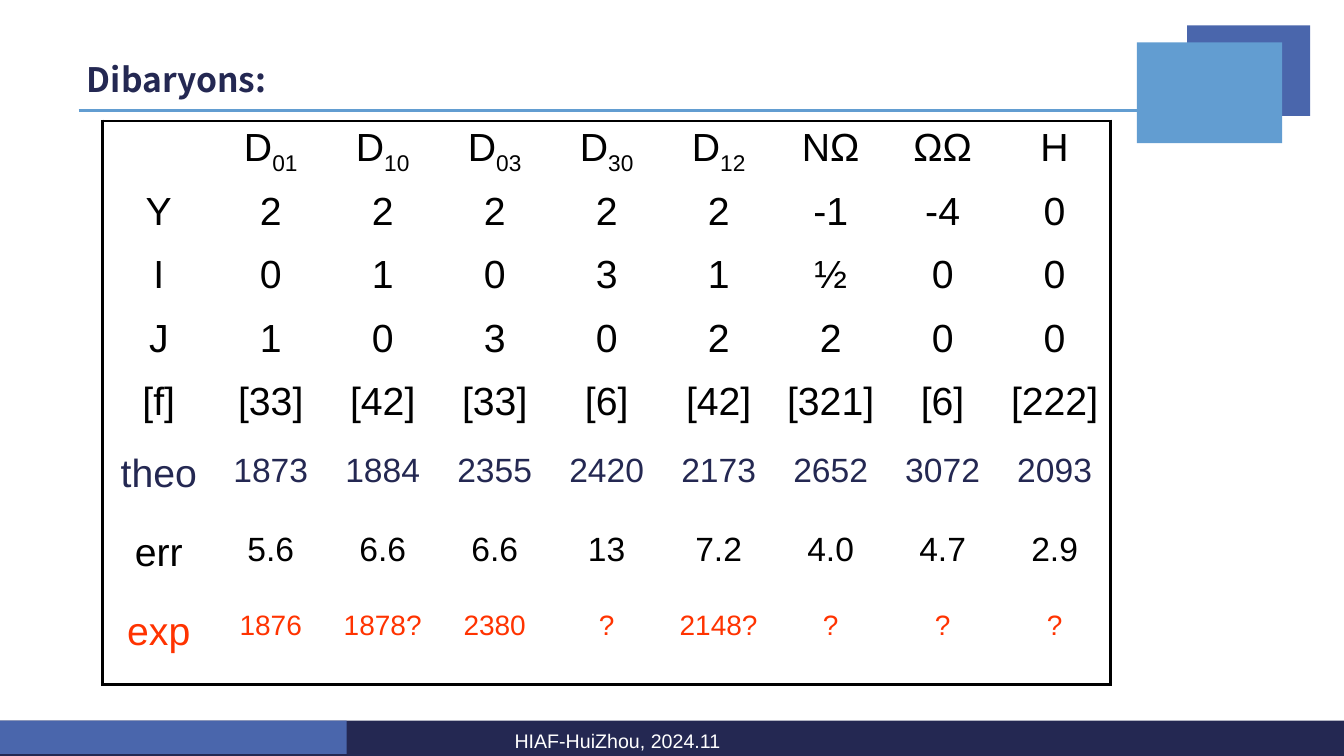
from lxml.etree import SubElement
from pptx import Presentation
from pptx.dml.color import RGBColor
from pptx.enum.shapes import MSO_CONNECTOR, MSO_SHAPE
from pptx.enum.text import MSO_ANCHOR, PP_ALIGN
from pptx.oxml.ns import qn
from pptx.util import Cm, Pt

# Content
TITLE = "Dibaryons:"
FOOTER = "HIAF-HuiZhou, 2024.11"
STATES = [("", ""), ("D", "01"), ("D", "10"), ("D", "03"), ("D", "30"),
          ("D", "12"), ("NΩ", ""), ("ΩΩ", ""), ("H", "")]
# label, values, row height in cm, value size, colour
PROPERTIES = [
    ("Y", ["2", "2", "2", "2", "2", "-1", "-4", "0"], 1.6, "large", "black"),
    ("I", ["0", "1", "0", "3", "1", "½", "0", "0"], 1.6, "large", "black"),
    ("J", ["1", "0", "3", "0", "2", "2", "0", "0"], 1.6, "large", "black"),
    ("[f]", ["[33]", "[42]", "[33]", "[6]", "[42]", "[321]", "[6]", "[222]"],
     1.8, "large", "black"),
    ("theo", ["1873", "1884", "2355", "2420", "2173", "2652", "3072", "2093"],
     2.0, "medium", "navy"),
    ("err", ["5.6", "6.6", "6.6", "13", "7.2", "4.0", "4.7", "2.9"],
     2.0, "medium", "black"),
    ("exp", ["1876", "1878?", "2380", "?", "2148?", "?", "?", "?"],
     2.0, "small", "red"),
]
HEADER_HEIGHT = 1.6

THEME = {
    "color": {"navy": "242852", "blue": "4A66AC", "sky": "629DD1",
              "black": "000000", "red": "FF3300", "white": "FFFFFF"},
    "size": {"large": 28, "medium": 24, "small": 20, "footer": 14},
    "body": "Arial", "heading": "Noto Sans CJK JP", "line": 2.25,
}
NO_STYLE = "{2D5ABB26-0587-4C30-8999-92F81FD0307C}"

# Slide areas in cm: left, top, width, height
SLIDE_W, SLIDE_H = 33.87, 19.05
PANELS = [
    ("navy", (0, 18.16, SLIDE_W, 0.89)),
    ("blue", (29.92, 0.64, 3.1, 2.28)),
    ("sky", (28.65, 1.07, 3.66, 2.54)),
    ("blue", (0, 18.16, 8.74, 0.84)),
]
RULE = (1.98, 2.79, 28.78, 2.79)
TITLE_AREA = (1.65, 1.08, 23.72, 1.85)
FOOTER_AREA = (10.46, 18.24, 10.21, 0.8)
TABLE_LEFT, TABLE_TOP, TABLE_W = 2.59, 3.05, 25.4


def lengths(area):
    return [Cm(value) for value in area]


def color(name):
    return RGBColor.from_string(THEME["color"][name])


def style(font, size, color_name, face="body"):
    font.name = THEME[face]
    font.size = Pt(THEME["size"][size])
    font.color.rgb = color(color_name)


def add_label(slide, area, text, size, color_name, face="body"):
    box = slide.shapes.add_textbox(*lengths(area))
    box.text_frame.word_wrap = True
    paragraph = box.text_frame.paragraphs[0]
    paragraph.text = text
    style(paragraph.font, size, color_name, face)
    return box.text_frame, paragraph


def write_cell(cell, text, subscript, size, color_name):
    paragraph = cell.text_frame.paragraphs[0]
    paragraph.alignment = PP_ALIGN.CENTER
    if text:
        paragraph.add_run().text = text
    if subscript:
        lowered = paragraph.add_run()
        lowered.text = subscript
        lowered._r.get_or_add_rPr().set("baseline", "-25000")
    style(paragraph.font, size, color_name)


def frame_cell(cell, sides):
    properties = cell._tc.get_or_add_tcPr()
    for side in sides:
        border = SubElement(properties, qn(f"a:ln{side}"),
                            w=str(Pt(THEME["line"])))
        fill = SubElement(border, qn("a:solidFill"))
        SubElement(fill, qn("a:srgbClr"), val=THEME["color"]["black"])
    cell.fill.background()


def add_dibaryon_table(slide):
    rows = [(STATES, HEADER_HEIGHT, "large", "black")]
    rows += [([(text, "") for text in [label, *values]], height, size, tint)
             for label, values, height, size, tint in PROPERTIES]
    heights = [height for _, height, _, _ in rows]
    last_row, last_column = len(rows) - 1, len(STATES) - 1

    area = (TABLE_LEFT, TABLE_TOP, TABLE_W, sum(heights))
    table = slide.shapes.add_table(len(rows), len(STATES), *lengths(area)).table
    table.first_row = table.horz_banding = False
    table._tbl.tblPr.find(qn("a:tableStyleId")).text = NO_STYLE
    for column in table.columns:
        column.width = Cm(TABLE_W / len(STATES))

    for r, (entries, height, value_size, tint) in enumerate(rows):
        table.rows[r].height = Cm(height)
        for c, (text, subscript) in enumerate(entries):
            cell = table.cell(r, c)
            size = value_size if c else "large"
            write_cell(cell, text, subscript, size, tint)
            outer = {"L": c == 0, "R": c == last_column,
                     "T": r == 0, "B": r == last_row}
            frame_cell(cell, [side for side, shown in outer.items() if shown])


def main():
    deck = Presentation()
    deck.slide_width, deck.slide_height = Cm(SLIDE_W), Cm(SLIDE_H)
    slide = deck.slides.add_slide(deck.slide_layouts[6])

    # Rule under the title
    rule = slide.shapes.add_connector(MSO_CONNECTOR.STRAIGHT, *lengths(RULE))
    rule.line.color.rgb = color("sky")
    rule.line.width = Pt(THEME["line"])
    SubElement(rule._element.spPr, qn("a:effectLst"))

    # Footer bars and corner blocks
    for tint, area in PANELS:
        panel = slide.shapes.add_shape(MSO_SHAPE.RECTANGLE, *lengths(area))
        panel.shadow.inherit = False
        panel.fill.solid()
        panel.fill.fore_color.rgb = color(tint)
        panel.line.fill.background()

    # Footer and title
    _, footer = add_label(slide, FOOTER_AREA, FOOTER, "footer", "white")
    footer.alignment = PP_ALIGN.CENTER
    title_frame, title = add_label(slide, TITLE_AREA, TITLE, "medium", "navy",
                                   "heading")
    title_frame.vertical_anchor = MSO_ANCHOR.MIDDLE
    title_frame.margin_left = Cm(0.54)
    title.font.bold = True

    add_dibaryon_table(slide)
    deck.save("out.pptx")


if __name__ == "__main__":
    main()
